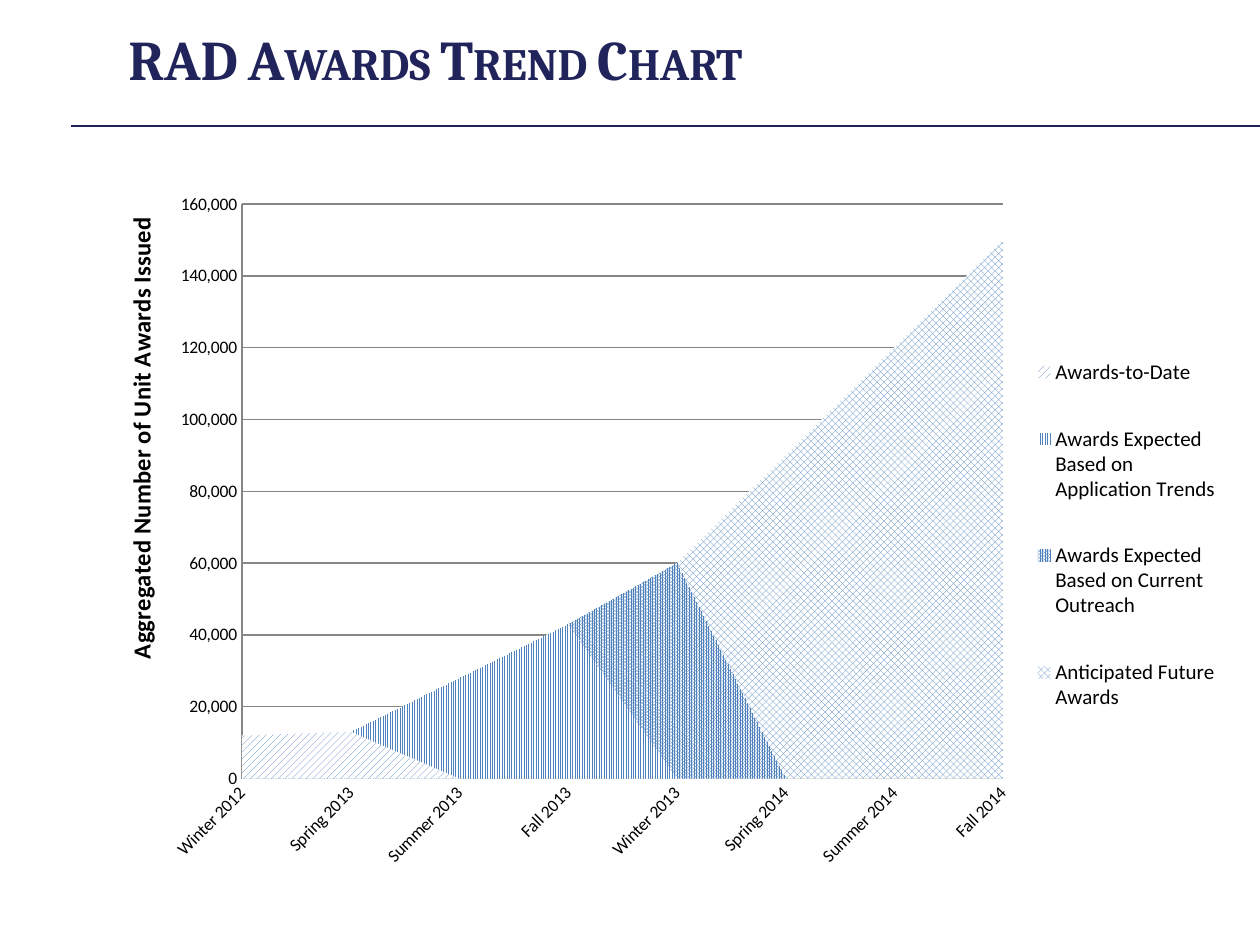
import pptx
import pptx.chart.data
import pptx.dml.color
import pptx.enum.chart
import pptx.enum.dml
import pptx.enum.shapes
import pptx.enum.text
import pptx.oxml
import pptx.oxml.ns
import pptx.util

Inches = pptx.util.Inches
Pt = pptx.util.Pt
qn = pptx.oxml.ns.qn
HUES = {"navy": "21245A", "blue": "4F81BD", "white": "FFFFFF",
        "black": "000000", "grey": "868686"}
PAT = pptx.enum.dml.MSO_PATTERN
CATS = ["Winter 2012", "Spring 2013", "Summer 2013", "Fall 2013",
        "Winter 2013", "Spring 2014", "Summer 2014", "Fall 2014"]
ROWS = [
    ("Awards-to-Date", 0, [12000, 13000], PAT.WIDE_UPWARD_DIAGONAL),
    ("Awards Expected Based on Application Trends", 1,
     [13000, 28000, 43000], PAT.NARROW_VERTICAL),
    ("Awards Expected Based on Current Outreach", 3,
     [43000, 60000], PAT.PERCENT_90),
    ("Anticipated Future Awards", 4,
     [60000, 90000, 120000, 150000], PAT.LARGE_CHECKER_BOARD),
]


def hue(name):
    """Return the named colour."""
    return pptx.dml.color.RGBColor.from_string(HUES[name])


def style(font, size, face, tint, bold=False):
    """Set the size, face, colour and weight of a font."""
    font.size, font.name, font.bold = Pt(size), face, bold
    font.color.rgb = hue(tint)


def lay_out(node, index, box, size, inner=False):
    """Fix the place of a chart part, its box given within the chart size."""
    for old in node.findall(qn("c:layout")):
        node.remove(old)
    parts = [("layoutTarget", "inner")] if inner else []
    parts += [("xMode", "edge"), ("yMode", "edge")]
    parts += [(tag, Inches(val) / full)
              for tag, val, full in zip("xywh", box, size * 2)]
    body = "".join(f'<c:{tag} val="{val}"/>' for tag, val in parts)
    node.insert(index, pptx.oxml.parse_xml(
        f'<c:layout {pptx.oxml.ns.nsdecls("c")}>'
        f"<c:manualLayout>{body}</c:manualLayout></c:layout>"))


def add_title(slide, left, top, width, height):
    """Place the slide title."""
    frame = slide.shapes.add_textbox(left, top, width, height).text_frame
    frame.word_wrap = True
    frame.vertical_anchor = pptx.enum.text.MSO_ANCHOR.MIDDLE
    run = frame.paragraphs[0].add_run()
    run.text = "RAD Awards Trend Chart"
    style(run.font, 32, "Cambria", "navy", True)
    run.font._element.set("cap", "small")


def add_rule(slide, left, top, width):
    """Draw the line below the title."""
    rule = slide.shapes.add_connector(
        pptx.enum.shapes.MSO_CONNECTOR.STRAIGHT, left, top, left + width, top)
    rule.line.color.rgb = hue("navy")
    rule.line.width = Pt(0.75)
    rule._element.spPr.append(pptx.oxml.parse_xml(
        f'<a:effectLst {pptx.oxml.ns.nsdecls("a")}/>'))


def style_axes(chart, size):
    """Style both axes, the grid and the axis title."""
    enum = pptx.enum.chart
    cat, val = chart.category_axis, chart.value_axis
    for axis in (cat, val):
        axis.major_tick_mark = axis.minor_tick_mark = enum.XL_TICK_MARK.NONE
        axis.format.line.color.rgb = hue("grey")
        style(axis.tick_labels.font, 10, "Calibri", "black")
    cat._element.find(qn("c:txPr")).find(qn("a:bodyPr")).set("rot", "-2700000")
    val.minimum_scale, val.maximum_scale, val.major_unit = 0, 160000, 20000
    val.tick_labels.number_format = "#,##0"
    val.tick_labels.number_format_is_linked = False
    val.has_major_gridlines = True
    val.major_gridlines.format.line.color.rgb = hue("grey")
    frame = val.axis_title.text_frame
    run = frame.paragraphs[0].add_run()
    run.text = "Aggregated Number of Unit Awards Issued"
    style(run.font, 14, "Calibri", "black", True)
    body = frame._txBody.find(qn("a:bodyPr"))
    body.set("rot", "-5400000")
    body.set("vert", "horz")
    lay_out(val.axis_title._element, 1, (0.12, 0.77), size)


def add_trend(slide, left, top, width, height):
    """Place the area chart of awards with its legend."""
    enum = pptx.enum.chart
    size = (width, height)
    data = pptx.chart.data.CategoryChartData(number_format="#,##0")
    data.categories = CATS
    for name, start, vals, _ in ROWS:
        tail = len(CATS) - start - len(vals)
        data.add_series(name, [None] * start + vals + [None] * tail)
    chart = slide.shapes.add_chart(
        enum.XL_CHART_TYPE.AREA, left, top, width, height, data).chart
    chart.has_title = False
    style(chart.font, 10, "Calibri", "black")
    for series, row in zip(chart.plots[0].series, ROWS):
        fill = series.format.fill
        fill.patterned()
        fill.pattern = row[3]
        fill.fore_color.rgb, fill.back_color.rgb = hue("blue"), hue("white")
    style_axes(chart, size)
    chart.has_legend = True
    chart.legend.position = enum.XL_LEGEND_POSITION.RIGHT
    chart.legend.include_in_layout = False
    style(chart.legend.font, 12, "Calibri", "black")
    lay_out(chart.legend._element, 1, (7.36, 1.6, 1.5, 3.45), size)
    root = chart._chartSpace.chart
    lay_out(root.plotArea, 0, (1.09, 0.7, 6.04, 4.56), size, True)
    for blank in root.findall(qn("c:dispBlanksAs")):
        blank.set("val", "zero")


def main():
    """Build and save the slide."""
    deck = pptx.Presentation()
    deck.slide_width, deck.slide_height = Inches(10), Inches(7.5)
    slide = deck.slides.add_slide(deck.slide_layouts[6])
    add_rule(slide, Inches(0.56), Inches(1), Inches(9.44))
    add_trend(slide, Inches(0.83), Inches(0.92), Inches(9.05), Inches(6.38))
    add_title(slide, Inches(0.92), Inches(0.17), Inches(8.89), Inches(0.58))
    deck.save("out.pptx")


if __name__ == "__main__":
    main()
